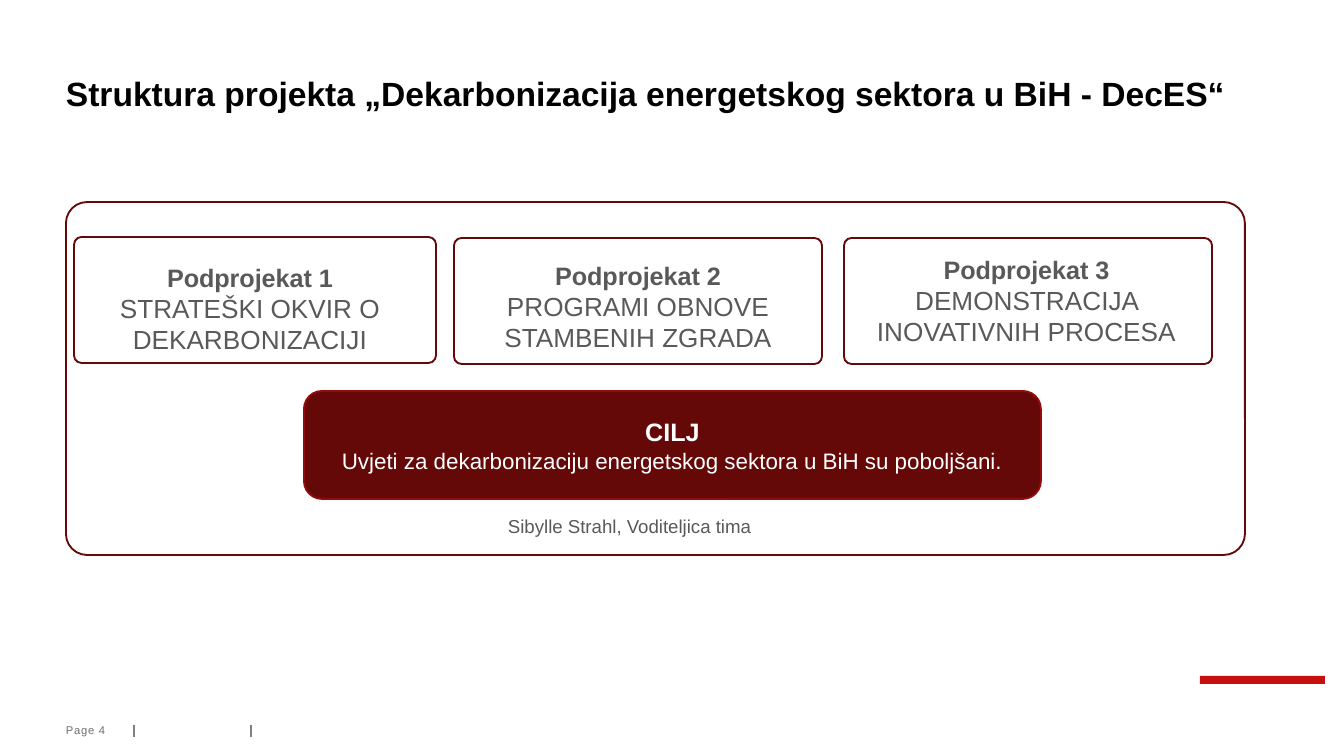
"""Build the project structure slide with three subprojects and their goal."""
from dataclasses import dataclass
from typing import Optional

import pptx
import pptx.dml.color
import pptx.enum.shapes
import pptx.enum.text
import pptx.oxml.ns
import pptx.util
from lxml import etree

EMU_PER_PX = 9144000 / 1344
FONT = "Arial"
MAROON, GRAY, WHITE = "640808", "595959", "FFFFFF"
ALIGN = pptx.enum.text.PP_ALIGN
ANCHOR = pptx.enum.text.MSO_ANCHOR
PRESET = pptx.enum.shapes.MSO_SHAPE


@dataclass(frozen=True)
class Box:
    """A rectangle in px."""
    left: int
    top: int
    width: int
    height: int


@dataclass(frozen=True)
class Line:
    """One paragraph with its size and weight."""
    text: str
    size: float
    bold: bool = False


@dataclass(frozen=True)
class Subproject:
    """An outlined card and the label laid over it."""
    card: Box
    label: Box
    name: str
    topic: str


SUBPROJECTS = [
    Subproject(Box(74, 237, 362, 126), Box(66, 255, 368, 108),
               "Podprojekat 1", "STRATEŠKI OKVIR O DEKARBONIZACIJI"),
    Subproject(Box(454, 238, 368, 126), Box(454, 253, 368, 108),
               "Podprojekat 2", "PROGRAMI OBNOVE STAMBENIH ZGRADA"),
    Subproject(Box(844, 238, 368, 126), Box(841, 247, 371, 108),
               "Podprojekat 3", "DEMONSTRACIJA INOVATIVNIH PROCESA"),
]


def px(length: int) -> int:
    """Turn px into EMU."""
    return pptx.util.Emu(round(length * EMU_PER_PX))


def color(value: str) -> pptx.dml.color.RGBColor:
    """Turn a hex string into a colour."""
    return pptx.dml.color.RGBColor.from_string(value)


def place(box: Box) -> tuple:
    """Give the position and size of a box in EMU."""
    return px(box.left), px(box.top), px(box.width), px(box.height)


def write(shape, lines: list[Line], *, ink: str, align=ALIGN.LEFT,
          anchor=ANCHOR.TOP, insets=(13, 7, 13, 7),
          line_spacing: Optional[float] = None, tracking: int = 0) -> None:
    """Fill a shape with formatted paragraphs."""
    frame = shape.text_frame
    frame.word_wrap = True
    frame.vertical_anchor = anchor
    (frame.margin_left, frame.margin_top,
     frame.margin_right, frame.margin_bottom) = map(px, insets)
    for index, line in enumerate(lines):
        paragraph = frame.add_paragraph() if index else frame.paragraphs[0]
        paragraph.alignment = align
        paragraph.line_spacing = line_spacing
        run = paragraph.add_run()
        run.text = line.text
        run.font.name = FONT
        run.font.size = pptx.util.Pt(line.size)
        run.font.bold = line.bold
        run.font.color.rgb = color(ink)
        if tracking:
            run.font._element.set("spc", str(tracking))


def add_text(slide, box: Box, lines: list[Line], **text_format) -> None:
    """Add a text box."""
    write(slide.shapes.add_textbox(*place(box)), lines, **text_format)


def add_block(slide, box: Box, *, preset=PRESET.ROUNDED_RECTANGLE,
              fill: Optional[str] = None, outline: Optional[str] = None,
              rounding: Optional[float] = None):
    """Add a preset shape with an optional fill and outline."""
    shape = slide.shapes.add_shape(preset, *place(box))
    shape.shadow.inherit = False
    if rounding is not None:
        shape.adjustments[0] = rounding
    if fill:
        shape.fill.solid()
        shape.fill.fore_color.rgb = color(fill)
    else:
        shape.fill.background()
    if outline:
        shape.line.color.rgb = color(outline)
        shape.line.width = pptx.util.Pt(1)
    else:
        shape.line.fill.background()
    return shape


def add_divider(slide, x: int, top: int, bottom: int) -> None:
    """Add a thin vertical footer divider."""
    connector = slide.shapes.add_connector(
        pptx.enum.shapes.MSO_CONNECTOR.STRAIGHT, px(x), px(top), px(x), px(bottom))
    connector.line.color.rgb = color("808080")
    connector.line.width = pptx.util.Pt(0.75)
    etree.SubElement(connector._element.spPr, pptx.oxml.ns.qn("a:effectLst"))


def main() -> None:
    """Build and save the slide."""
    presentation = pptx.Presentation()
    presentation.slide_width, presentation.slide_height = px(1344), px(756)
    slide = presentation.slides.add_slide(presentation.slide_layouts[6])

    add_block(slide, Box(1200, 676, 125, 8), preset=PRESET.RECTANGLE, fill="C80F0F")
    for x in (134, 251):
        add_divider(slide, x, 725, 737)
    add_text(slide, Box(66, 35, 1259, 79),
             [Line("Struktura projekta „Dekarbonizacija energetskog sektora u BiH - DecES“",
                   18, True)],
             ink="000000", anchor=ANCHOR.BOTTOM, insets=(0, 0, 11, 0), line_spacing=0.9)
    add_text(slide, Box(66, 724, 66, 13), [Line("Page 4", 6)], ink="6F6F6F",
             anchor=ANCHOR.MIDDLE, insets=(0, 0, 0, 0), tracking=40)

    for subproject in SUBPROJECTS:
        add_block(slide, subproject.card, outline=MAROON, rounding=0.06)
        add_text(slide, subproject.label,
                 [Line(subproject.name, 13.5, True), Line(subproject.topic, 14)],
                 ink=GRAY, align=ALIGN.CENTER)

    goal = add_block(slide, Box(304, 391, 737, 108), fill=MAROON, outline="940B0B")
    write(goal,
          [Line("CILJ", 13.5, True),
           Line("Uvjeti za dekarbonizaciju energetskog sektora u BiH su poboljšani.", 12)],
          ink=WHITE, align=ALIGN.CENTER, anchor=ANCHOR.MIDDLE)
    add_text(slide, Box(495, 508, 278, 36),
             [Line("Sibylle Strahl, Voditeljica tima", 10)], ink=GRAY)
    add_block(slide, Box(66, 202, 1179, 353), outline=MAROON, rounding=0.06)

    presentation.save("out.pptx")


if __name__ == "__main__":
    main()
